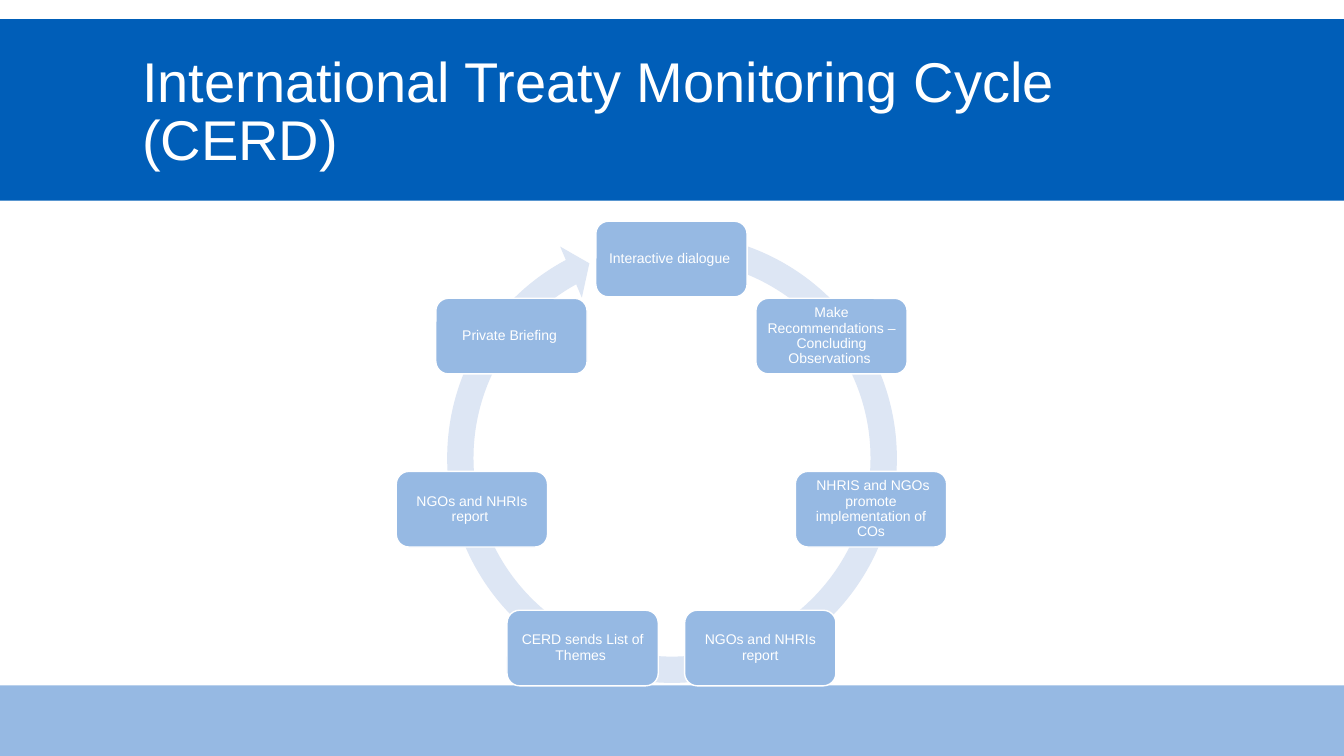
from dataclasses import dataclass
from math import cos, pi, sin

from pptx import Presentation
from pptx.dml.color import RGBColor
from pptx.enum import shapes, text
from pptx.util import Inches, Pt


@dataclass(frozen=True)
class Theme:
    blue: RGBColor = RGBColor(0x00, 0x5E, 0xB8)
    light_blue: RGBColor = RGBColor(0x96, 0xB9, 0xE3)
    pale_blue: RGBColor = RGBColor(0xDD, 0xE6, 0xF4)
    white: RGBColor = RGBColor(0xFF, 0xFF, 0xFF)
    font: str = "Arial"
    title_size: Pt = Pt(40)
    step_size: Pt = Pt(10)


THEME = Theme()
SLIDE_W, SLIDE_H = 13.33, 7.5
CENTER_X, CENTER_Y, RADIUS = 6.66, 4.6, 2.03
STEP_W, STEP_H = 1.5, 0.75
STEPS = [
    "Interactive dialogue ",
    "Make Recommendations – Concluding Observations ",
    " NHRIS and NGOs promote implementation of COs",
    "NGOs and NHRIs report",
    "CERD sends List of Themes ",
    "NGOs and NHRIs report ",
    "Private Briefing ",
]


def add_filled(s, kind, left, top, width, height, color):
    sp = s.shapes.add_shape(
        kind, Inches(left), Inches(top), Inches(width), Inches(height)
    )
    sp.shadow.inherit = False
    sp.fill.solid()
    sp.fill.fore_color.rgb = color
    sp.line.fill.background()
    return sp


def add_band(s, top, height, color):
    sp = add_filled(s, shapes.MSO_SHAPE.RECTANGLE, 0, top, SLIDE_W, height, color)
    s.shapes._spTree.insert(2, sp._element)


def write_text(tf, words, size, align, spacing):
    tf.word_wrap = True
    tf.auto_size = text.MSO_AUTO_SIZE.NONE
    tf.vertical_anchor = text.MSO_ANCHOR.MIDDLE
    p = tf.paragraphs[0]
    p.alignment = align
    p.line_spacing = spacing
    r = p.add_run()
    r.text = words
    r.font.name = THEME.font
    r.font.size = size
    r.font.color.rgb = THEME.white


def set_title(s, words):
    sp = s.shapes.title
    sp.left, sp.top = Inches(1.31), Inches(0.31)
    sp.width, sp.height = Inches(10.7), Inches(1.65)
    write_text(sp.text_frame, words, THEME.title_size, text.PP_ALIGN.LEFT, 0.85)


def add_cycle_arrow(s):
    sp = add_filled(
        s, shapes.MSO_SHAPE.CIRCULAR_ARROW, 4.29, 2.17, 4.75, 4.75, THEME.pale_blue
    )
    for i, value in enumerate([0.055, 3.307, 144.902, 169.648, 0.058]):
        sp.adjustments[i] = value


def add_step(s, words, angle):
    left = CENTER_X + RADIUS * sin(angle) - STEP_W / 2
    top = CENTER_Y - RADIUS * cos(angle) - STEP_H / 2
    sp = add_filled(
        s, shapes.MSO_SHAPE.ROUNDED_RECTANGLE, left, top, STEP_W, STEP_H,
        THEME.light_blue,
    )
    sp.line.color.rgb = THEME.white
    sp.line.width = Pt(1)
    tf = sp.text_frame
    tf.margin_left = tf.margin_right = Inches(0.04)
    tf.margin_top = tf.margin_bottom = Inches(0.04)
    write_text(tf, words, THEME.step_size, text.PP_ALIGN.CENTER, 0.9)


def main():
    prs = Presentation()
    prs.slide_width, prs.slide_height = Inches(SLIDE_W), Inches(SLIDE_H)
    s = prs.slides.add_slide(prs.slide_layouts[5])
    add_band(s, 6.8, 0.7, THEME.light_blue)
    add_band(s, 0.19, 1.8, THEME.blue)
    set_title(s, "International Treaty Monitoring Cycle (CERD)")
    add_cycle_arrow(s)
    for i, words in enumerate(STEPS):
        add_step(s, words, 2 * pi * i / len(STEPS))
    prs.save("out.pptx")


if __name__ == "__main__":
    main()
